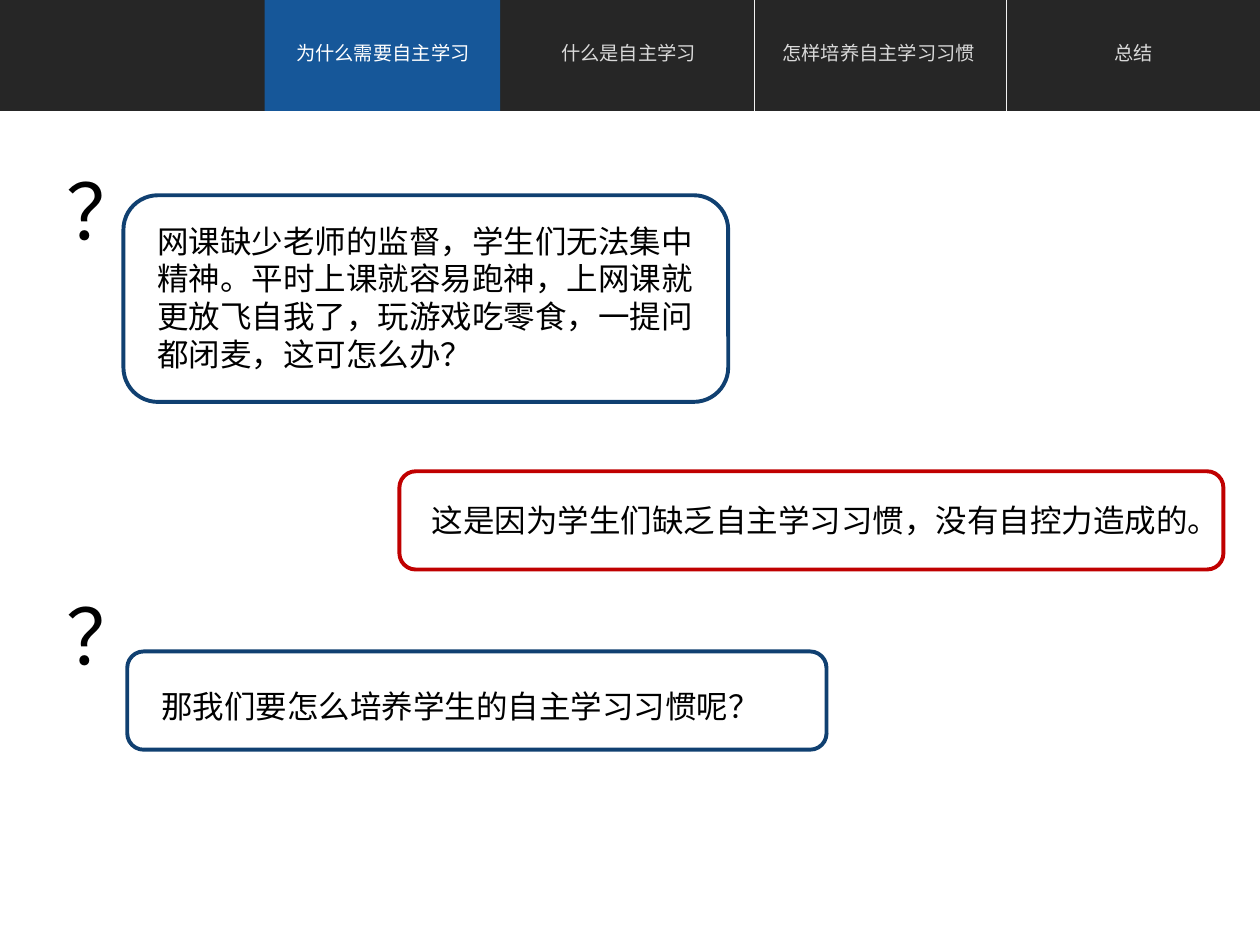
import pptx
import pptx.dml.color
import pptx.enum.shapes
import pptx.enum.text
import pptx.util
from pptx.util import Inches

RGBColor = pptx.dml.color.RGBColor
CHARCOAL = RGBColor(0x26, 0x26, 0x26)
ACTIVE_BLUE = RGBColor(0x16, 0x57, 0x99)
NAVY = RGBColor(0x10, 0x40, 0x71)
RED = RGBColor(0xC0, 0x00, 0x00)
WHITE = RGBColor(0xFF, 0xFF, 0xFF)
PALE = RGBColor(0xF2, 0xF2, 0xF2)
MUTED = RGBColor(0xD9, 0xD9, 0xD9)
BLACK = RGBColor(0x00, 0x00, 0x00)
BAR_HEIGHT = 0.88


class DialogueSlide:
    nav_font = "Noto Sans CJK SC"
    body_font = "Arial"

    def __init__(self, deck):
        self.slide = deck.slides.add_slide(deck.slide_layouts[6])

    def shape(self, kind, left, top, width, height):
        shape = self.slide.shapes.add_shape(
            kind, Inches(left), Inches(top), Inches(width), Inches(height))
        shape.shadow.inherit = False
        return shape

    def block(self, left, width, color):
        block = self.shape(pptx.enum.shapes.MSO_SHAPE.RECTANGLE, left, 0, width, BAR_HEIGHT)
        block.fill.solid()
        block.fill.fore_color.rgb = color
        block.line.fill.background()

    def text(self, words, left, top, width, height, size, font, color=BLACK,
             align=pptx.enum.text.PP_ALIGN.LEFT, wrap=True):
        box = self.slide.shapes.add_textbox(
            Inches(left), Inches(top), Inches(width), Inches(height))
        box.text_frame.word_wrap = wrap
        paragraph = box.text_frame.paragraphs[0]
        paragraph.text = words
        paragraph.alignment = align
        paragraph.font.size = pptx.util.Pt(size)
        paragraph.font.name = font
        paragraph.font.color.rgb = color

    def tab(self, words, left, width, color=MUTED):
        self.text(words, left, 0.28, width, 0.28, 11, self.nav_font, color,
                  pptx.enum.text.PP_ALIGN.CENTER)

    def divider(self, x):
        divider = self.slide.shapes.add_connector(
            pptx.enum.shapes.MSO_CONNECTOR.STRAIGHT,
            Inches(x), Inches(0), Inches(x), Inches(BAR_HEIGHT))
        divider.line.color.rgb = PALE
        divider.line.width = pptx.util.Pt(0.75)
        divider._element.spPr.append(pptx.oxml.parse_xml(
            '<a:effectLst xmlns:a="http://schemas.openxmlformats.org/drawingml/2006/main"/>'))

    def bubble(self, words, color, frame, text_area):
        bubble = self.shape(pptx.enum.shapes.MSO_SHAPE.ROUNDED_RECTANGLE, *frame)
        bubble.fill.background()
        bubble.line.color.rgb = color
        bubble.line.width = pptx.util.Pt(2.25)
        self.text(words, *text_area, 18, self.body_font)

    def question_mark(self, top):
        self.text("？", 0.43, top, 0.82, 0.84, 44, self.body_font, wrap=False)


def main():
    deck = pptx.Presentation()
    deck.slide_width = Inches(10)
    deck.slide_height = Inches(7.5)
    page = DialogueSlide(deck)

    page.block(0, 10, CHARCOAL)
    page.block(2.1, 1.87, ACTIVE_BLUE)
    page.tab("为什么需要自主学习", 2.21, 1.66, WHITE)
    page.tab("什么是自主学习", 4.26, 1.46)
    page.tab("怎样培养自主学习习惯", 6.06, 1.83)
    page.tab("总结", 8.22, 1.56)
    for x in (5.99, 7.99):
        page.divider(x)

    page.bubble("网课缺少老师的监督，学生们无法集中精神。平时上课就容易跑神，"
                "上网课就更放飞自我了，玩游戏吃零食，一提问都闭麦，这可怎么办？",
                NAVY, (0.98, 1.55, 4.8, 1.64), (1.15, 1.71, 4.56, 1.31))
    page.bubble("这是因为学生们缺乏自主学习习惯，没有自控力造成的。",
                RED, (3.17, 3.74, 6.54, 0.78), (3.33, 3.93, 6.38, 0.4))
    page.bubble("那我们要怎么培养学生的自主学习习惯呢？",
                NAVY, (1.01, 5.17, 5.55, 0.78), (1.18, 5.4, 5.26, 0.34))
    for top in (1.25, 4.62):
        page.question_mark(top)

    deck.save("out.pptx")


if __name__ == "__main__":
    main()
